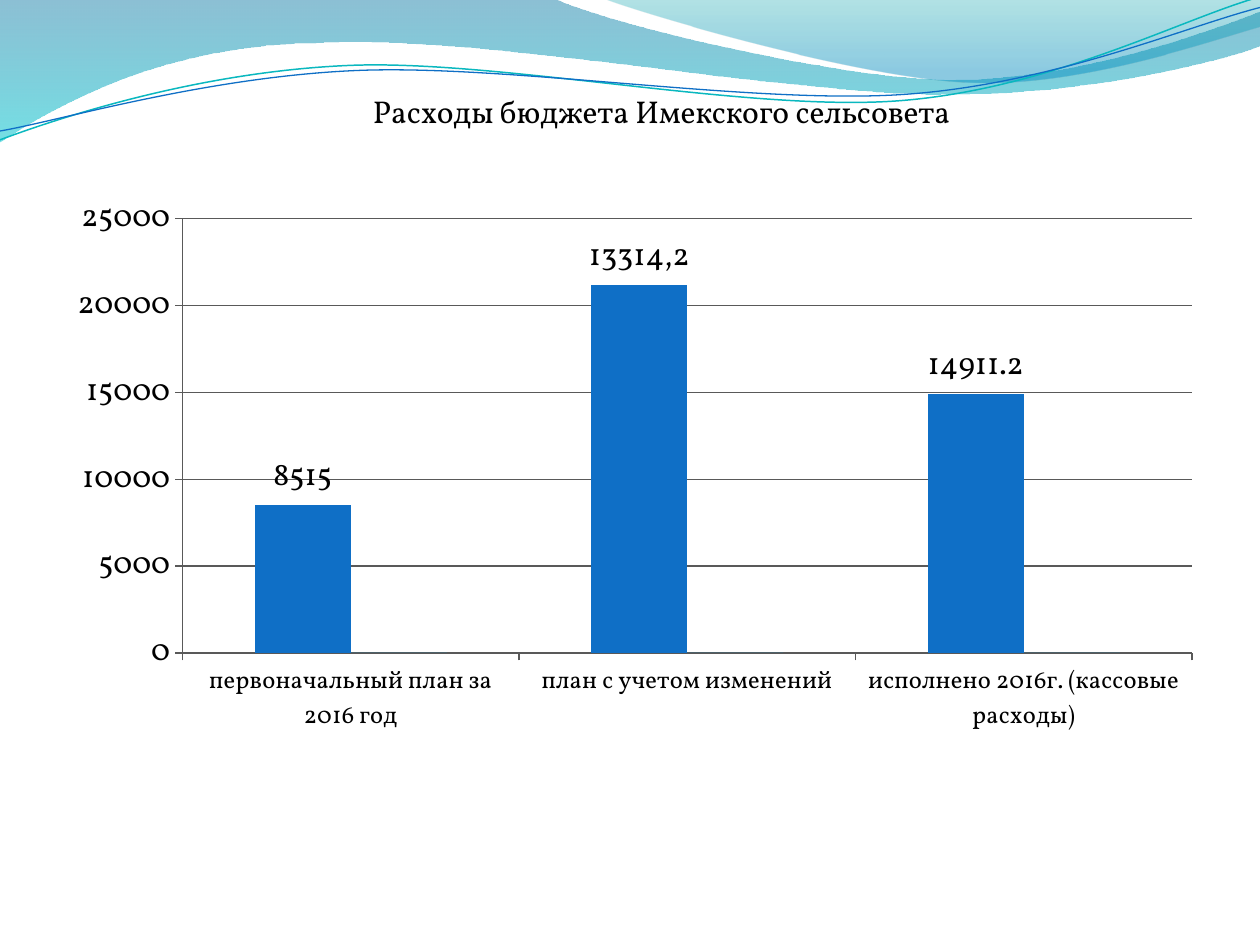
from math import cos, radians, sin

from lxml.etree import SubElement
from pptx import Presentation
from pptx.chart.data import CategoryChartData
from pptx.dml.color import RGBColor
from pptx.enum.chart import XL_CHART_TYPE as ChartType
from pptx.enum.chart import XL_LABEL_POSITION as LabelPosition
from pptx.enum.chart import XL_TICK_MARK as TickMark
from pptx.enum.text import MSO_AUTO_SIZE as AutoSize
from pptx.enum.text import PP_ALIGN as Align
from pptx.oxml.ns import qn
from pptx.util import Pt

COLORS = {
    "text": "000000", "axis": "595959",
    "bar": "0F6FC6", "bar_2": "009DD9", "bar_3": "0BD0D9",
    "teal_line": "0AB8BF", "blue_line": "0F6FC6",
    "wave_top": "0074A1", "wave_bottom": "00C6CF",
    "crest_top": "00A1A9", "crest_bottom": "008BBF",
}
CURVE_TILT = -2.7

# Outlines in points: a pair is a straight step, six numbers are a Bezier curve.
WAVE = [
    (0, -0.7), (316.8, -0.7),
    (342.7, 12.2, 478.1, 45.4, 545.8, 45.4),
    (614.2, 45.4, 689.8, 18.7, 720, 6.5),
    (720.7, 25.9),
    (707.8, 31.7, 626.4, 54.7, 537.1, 54),
    (447.8, 54, 275, 20.2, 185, 24.5),
    (92.9, 25.2, 33.1, 59.8, -0.7, 81.4),
]
CREST = [
    (344.9, -0.7),
    (366.5, 7.9, 491, 44.6, 553.7, 46.8),
    (616.3, 49.7, 691.9, 23, 720, 15.1),
    (720, 0),
]
TEAL_CURVE = [
    (0, 79.9),
    (34.6, 67, 113.8, 41, 199.4, 37.4),
    (284.4, 33.8, 427, 64.1, 513.4, 57.6),
    (599.8, 51.1, 675.4, 10.8, 718.6, -1.4),
]
BLUE_CURVE = [
    (0, 74.9),
    (33.8, 69.1, 118.1, 43.9, 203.8, 40.3),
    (290.2, 36.7, 429.8, 59.8, 516.2, 54),
    (601.9, 48.2, 677.5, 15.1, 720, 4.3),
]


def rgb(name):
    return RGBColor.from_string(COLORS[name])


def pairs(step):
    return list(zip(step[::2], step[1::2]))


def turn(steps, center, degrees):
    """Rotate every point of the steps clockwise about the center."""
    c, s = cos(radians(degrees)), sin(radians(degrees))
    cx, cy = center
    return [
        tuple(n for x, y in pairs(step)
              for n in (cx + (x - cx) * c - (y - cy) * s,
                        cy + (x - cx) * s + (y - cy) * c))
        for step in steps]


class Deck:
    font = "Vollkorn"

    def __init__(self, slide):
        self.slide = slide

    def style(self, font, size):
        font.name = self.font
        font.size = Pt(size)
        font.bold = False
        font.color.rgb = rgb("text")

    def outline(self, steps, close):
        """Build the control polygon, then merge line triples into Beziers."""
        points = [(Pt(x), Pt(y)) for step in steps for x, y in pairs(step)]
        builder = self.slide.shapes.build_freeform(*points[0])
        builder.add_line_segments(points[1:], close=close)
        shape = builder.convert_to_shape()
        shape.shadow.inherit = False
        lines = iter(list(shape._element.spPr.iter(qn("a:lnTo"))))
        for step in steps[1:]:
            segment = next(lines)
            if len(step) == 6:
                segment.tag = qn("a:cubicBezTo")
                for extra in (next(lines), next(lines)):
                    segment.append(extra[0])
                    extra.getparent().remove(extra)
        return shape

    def band(self, steps, stops):
        """Draw a closed area; each stop is (position, colour, opacity percent)."""
        shape = self.outline(steps, close=True)
        shape.line.fill.background()
        shape.fill.gradient()
        shape.fill.gradient_angle = 270
        for stop, (position, color, _) in zip(shape.fill.gradient_stops, stops):
            stop.position = position
            stop.color.rgb = rgb(color)
        fills = shape._element.spPr.iter(qn("a:srgbClr"))
        for fill, (_, _, opacity) in zip(fills, stops):
            SubElement(fill, qn("a:alpha"), val=str(opacity * 1000))

    def curve(self, steps, center, color, width):
        shape = self.outline(turn(steps, center, -CURVE_TILT), close=False)
        shape.rotation = CURVE_TILT
        shape.fill.background()
        shape.line.color.rgb = rgb(color)
        shape.line.width = Pt(width)

    def title(self, text, left, top, width, height):
        box = self.slide.shapes.add_textbox(Pt(left), Pt(top), Pt(width), Pt(height))
        frame = box.text_frame
        frame.word_wrap = True
        frame.auto_size = AutoSize.SHAPE_TO_FIT_TEXT
        paragraph = frame.paragraphs[0]
        paragraph.text = text
        paragraph.alignment = Align.CENTER
        self.style(paragraph.font, 18)

    def axis(self, axis, size):
        axis.major_tick_mark = TickMark.OUTSIDE
        axis.minor_tick_mark = TickMark.NONE
        axis.format.line.color.rgb = rgb("axis")
        axis.format.line.width = Pt(0.75)
        self.style(axis.tick_labels.font, size)

    def column_chart(self, categories, series, left, top, width, height):
        data = CategoryChartData()
        data.categories = categories
        for name, values, _ in series:
            data.add_series(name, values)
        chart = self.slide.shapes.add_chart(
            ChartType.COLUMN_CLUSTERED, Pt(left), Pt(top), Pt(width), Pt(height), data).chart
        self.style(chart.font, 18)
        chart.has_title = False
        chart.has_legend = False
        self.axis(chart.category_axis, 14)
        self.axis(chart.value_axis, 18)
        gridlines = chart.value_axis.major_gridlines.format.line
        gridlines.color.rgb = rgb("axis")
        gridlines.width = Pt(0.75)
        plot = chart.plots[0]
        plot.gap_width = 150
        plot.vary_by_categories = False
        for column, (_, _, color) in zip(plot.series, series):
            column.format.fill.solid()
            column.format.fill.fore_color.rgb = rgb(color)
        return plot

    def value_labels(self, column, replaced):
        """Label each column with its value, or with its text in replaced."""
        labels = column.data_labels
        labels.show_value = True
        labels.position = LabelPosition.OUTSIDE_END
        self.style(labels.font, 18)
        for index, text in replaced.items():
            label = column.points[index].data_label
            run = label.text_frame.paragraphs[0].add_run()
            run.text = text
            self.style(run.font, 18)
            label.position = LabelPosition.OUTSIDE_END


def main():
    presentation = Presentation()
    presentation.slide_width, presentation.slide_height = Pt(720), Pt(540)
    deck = Deck(presentation.slides.add_slide(presentation.slide_layouts[6]))

    deck.band(WAVE, [(0, "wave_top", 45), (1, "wave_bottom", 55)])
    deck.band(CREST, [(0, "crest_top", 30), (0.8, "crest_bottom", 45)])
    deck.curve(TEAL_CURVE, (359.3, 41.4), "teal_line", 0.85)
    deck.curve(BLUE_CURVE, (359.6, 42.5), "blue_line", 0.75)

    expenses = deck.column_chart(
        ["первоначальный план за 2016 год", "план с учетом изменений",
         "исполнено 2016г. (кассовые расходы)"],
        [("Series 1", (8515, 21164.7, 14911.2), "bar"),
         ("Series 2", (0, 0, 0), "bar_2"),
         ("Series 3", (), "bar_3")],
        31, 105.8, 663.4, 319.8)
    deck.value_labels(expenses.series[0], {1: "13314,2"})
    deck.title("Расходы бюджета Имекского сельсовета", 37, 49, 682, 28.8)

    presentation.save("out.pptx")


if __name__ == "__main__":
    main()
